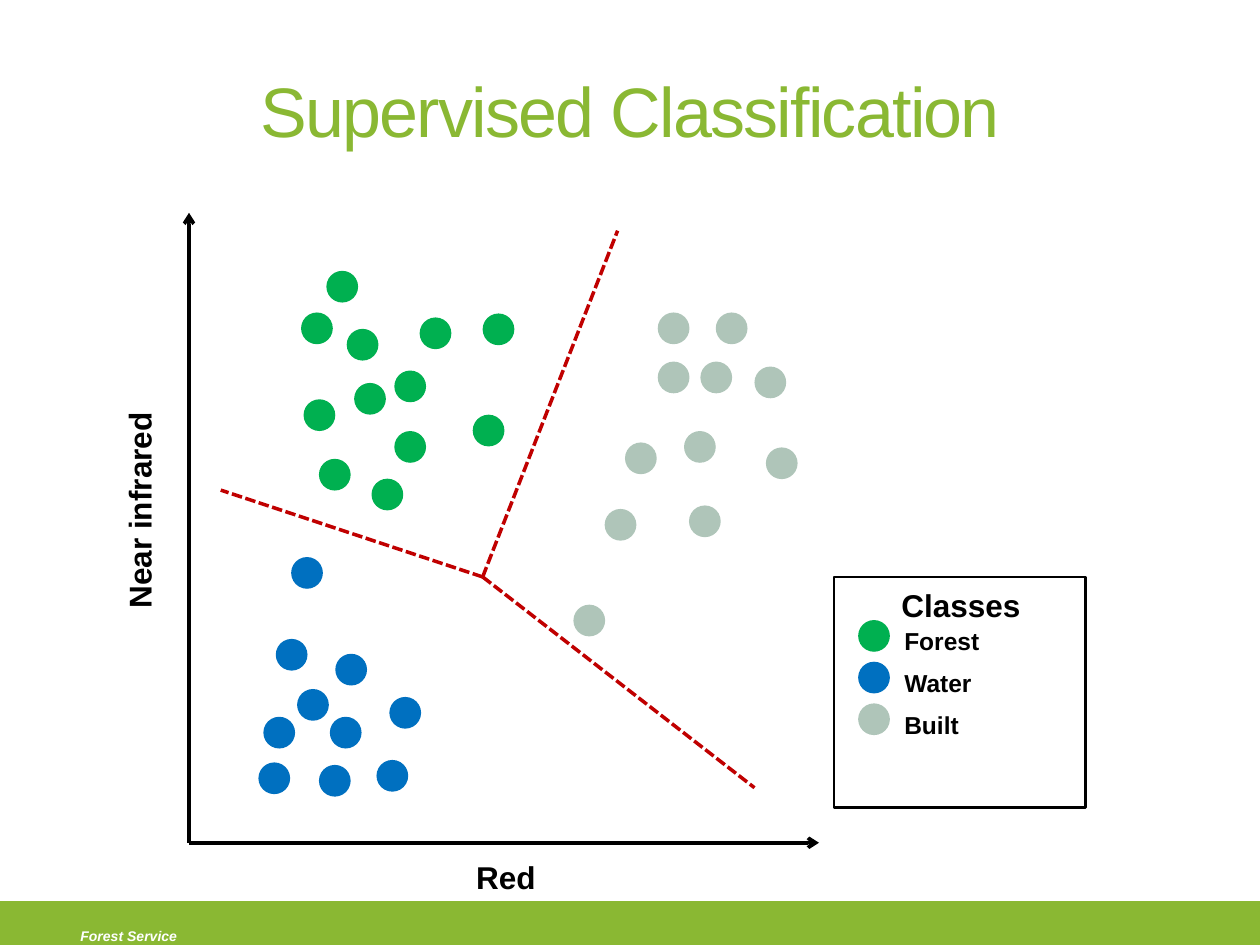
from lxml import etree
from pptx import Presentation
from pptx.dml.color import RGBColor
from pptx.enum.dml import MSO_LINE
from pptx.enum.shapes import MSO_CONNECTOR, MSO_SHAPE
from pptx.enum.text import MSO_ANCHOR, MSO_AUTO_SIZE, PP_ALIGN
from pptx.oxml.ns import qn
from pptx.util import Cm, Pt

STRAIGHT = MSO_CONNECTOR.STRAIGHT
DASHED = MSO_LINE.SQUARE_DOT
DOT, RECTANGLE = MSO_SHAPE.FLOWCHART_CONNECTOR, MSO_SHAPE.RECTANGLE
LEFT, CENTER = PP_ALIGN.LEFT, PP_ALIGN.CENTER
MIDDLE = MSO_ANCHOR.MIDDLE
GROW = MSO_AUTO_SIZE.SHAPE_TO_FIT_TEXT

COLORS = {
    "Forest": "00B050",
    "Water": "0070C0",
    "Built": "AFC5B9",
    "brand": "8AB833",
    "boundary": "C00000",
    "black": "000000",
    "white": "FFFFFF",
}
RGB = {name: RGBColor.from_string(value) for name, value in COLORS.items()}
DOT_SIZE = Cm(0.64)

prs = Presentation()
prs.slide_width, prs.slide_height = Cm(25.4), Cm(19.05)
slide = prs.slides.add_slide(prs.slide_layouts[6])


def add_label(shapes, text, box, size, align=LEFT, color="black", bold=True):
    label = shapes.add_textbox(*map(Cm, box))
    frame = label.text_frame
    frame.word_wrap = True
    frame.auto_size = GROW
    if align == CENTER:
        frame.margin_left = frame.margin_right = 0
    paragraph = frame.paragraphs[0]
    paragraph.text = text
    paragraph.alignment = align
    font = paragraph.font
    font.name, font.size, font.bold = "Arial", Pt(size), bold
    font.color.rgb = RGB[color]
    return label


def add_dot(shapes, land_class, left, top):
    dot = shapes.add_shape(DOT, Cm(left), Cm(top), DOT_SIZE, DOT_SIZE)
    dot.shadow.inherit = False
    dot.fill.solid()
    dot.fill.fore_color.rgb = RGB[land_class]
    dot.line.fill.background()


# Footer
footer_bar = slide.shapes.add_shape(RECTANGLE, 0, Cm(18.21), Cm(25.4), Cm(0.91))
footer_bar.shadow.inherit = False
footer_bar.fill.solid()
footer_bar.fill.fore_color.rgb = RGB["brand"]
footer_bar.line.color.rgb = RGB["brand"]
footer_bar.line.width = Pt(2.08)
footer = add_label(slide.shapes, "Forest Service", (1.37, 18.57, 5.18, 0.61), 8,
                   color="white")
footer.text_frame.paragraphs[0].font.italic = True

# Title
title = add_label(slide.shapes, "Supervised Classification",
                  (1.27, 0.84, 22.86, 2.74), 40, CENTER, "brand", False)
title.text_frame.auto_size = MSO_AUTO_SIZE.NONE
title.text_frame.vertical_anchor = MIDDLE
title.text_frame.paragraphs[0].runs[0].font._element.set("spc", "-100")

# Axes with arrowheads, then dashed class boundaries from their meeting point
origin, meeting_point = (3.81, 16.99), (9.73, 11.63)
lines = [
    (origin, (3.81, 4.29), "black"),
    (origin, (16.51, 16.99), "black"),
    (meeting_point, (4.45, 9.88), "boundary"),
    (meeting_point, (12.45, 4.65), "boundary"),
    (meeting_point, (15.21, 15.88), "boundary"),
]
for start, end, color in lines:
    line = slide.shapes.add_connector(STRAIGHT, *map(Cm, start + end))
    line.line.color.rgb = RGB[color]
    line.line.width = Pt(2)
    if color == "boundary":
        line.line.dash_style = DASHED
    else:
        etree.SubElement(line.line._get_or_add_ln(), qn("a:tailEnd"), type="arrow")
    etree.SubElement(line._element.spPr, qn("a:effectLst"))

# Axis names
near_infrared = add_label(slide.shapes, "Near infrared", (0.56, 9.78, 4.5, 1.02),
                          18, CENTER)
near_infrared.rotation = 270
add_label(slide.shapes, "Red", (7.95, 17.17, 4.5, 1.02), 18, CENTER)

# Samples of each class: left, top
samples = {
    "Forest": [
        (6.58, 5.46), (6.07, 6.3), (6.99, 6.63), (7.14, 7.72),
        (8.46, 6.4), (6.43, 9.25), (9.73, 6.32), (7.95, 8.69),
        (6.12, 8.05), (7.95, 7.47), (7.49, 9.65), (9.53, 8.36),
    ],
    "Water": [
        (5.31, 14.45), (5.99, 13.89), (5.56, 12.88), (6.43, 15.42),
        (6.65, 14.45), (6.76, 13.18), (5.21, 15.37), (7.59, 15.32),
        (5.87, 11.23), (7.85, 14.05),
    ],
    "Built": [
        (13.26, 7.29), (13.79, 8.69), (15.21, 7.39), (13.89, 10.19),
        (15.44, 9.02), (11.56, 12.19), (12.6, 8.92), (14.12, 7.29),
        (12.19, 10.26), (13.26, 6.3), (14.43, 6.3),
    ],
}
for land_class, positions in samples.items():
    for left, top in positions:
        add_dot(slide.shapes, land_class, left, top)

# Legend
legend = slide.shapes.add_group_shape().shapes
for row, land_class in enumerate(samples):
    top = 12.5 + 0.84 * row
    add_dot(legend, land_class, 17.3, top)
    add_label(legend, land_class, (17.98, top, 4.5, 0.86), 14)
add_label(legend, "Classes", (17.12, 11.68, 4.5, 1.02), 18, CENTER)
legend_frame = legend.add_shape(RECTANGLE, Cm(16.81), Cm(11.63), Cm(5.08), Cm(4.65))
legend_frame.shadow.inherit = False
legend_frame.fill.background()
legend_frame.line.color.rgb = RGB["black"]
legend_frame.line.width = Pt(1.5)

prs.save("out.pptx")
